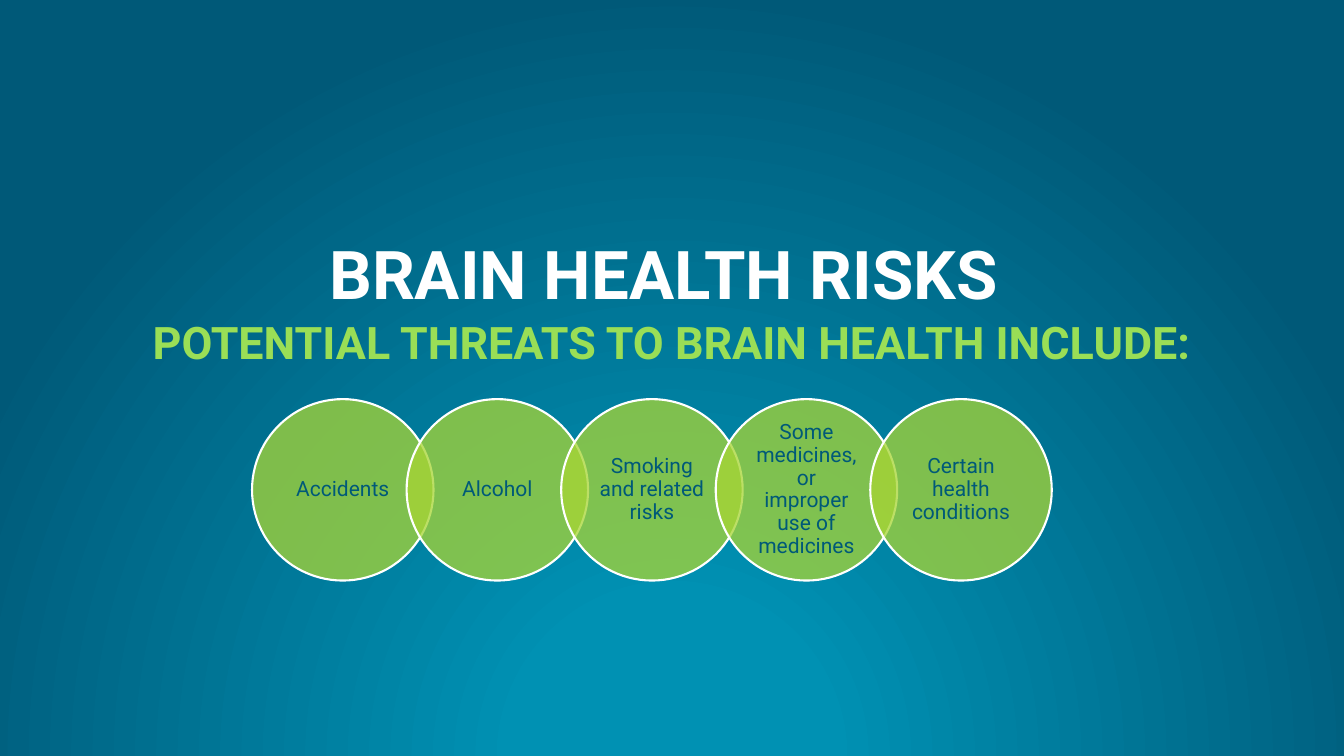
from pptx import Presentation
from pptx.dml.color import RGBColor
from pptx.enum.shapes import MSO_SHAPE
from pptx.enum.text import MSO_ANCHOR, PP_ALIGN
from pptx.oxml import parse_xml
from pptx.oxml.ns import nsdecls, qn
from pptx.util import Inches, Pt

OVAL = MSO_SHAPE.OVAL
CENTER = PP_ALIGN.CENTER
TOP, MIDDLE, BOTTOM = MSO_ANCHOR.TOP, MSO_ANCHOR.MIDDLE, MSO_ANCHOR.BOTTOM

FONT = "Roboto"
WHITE, NAVY, TEAL = "FFFFFF", "005978", "0091B3"
LIME, GREEN = "9ADE56", "A7D535"

RISKS = [
    "Accidents",
    "Alcohol",
    "Smoking and related risks",
    "Some medicines, or improper use of medicines",
    "Certain health conditions",
]
FIRST_LEFT, CIRCLE_TOP, DIAMETER, STEP = 2.5, 3.96, 1.8, 1.533


def rgb(color):
    return RGBColor.from_string(color)


def set_background(slide):
    stops = "".join(
        f'<a:gs pos="{pos * 1000}"><a:srgbClr val="{color}"/></a:gs>'
        for pos, color in [(0, TEAL), (20, TEAL), (100, NAVY)]
    )
    bg = parse_xml(
        f'<p:bg {nsdecls("p", "a")}><p:bgPr>'
        f'<a:gradFill rotWithShape="1"><a:gsLst>{stops}</a:gsLst>'
        '<a:path path="circle">'
        '<a:fillToRect l="50000" t="130000" r="50000" b="-30000"/></a:path>'
        "</a:gradFill><a:effectLst/></p:bgPr></p:bg>"
    )
    slide.element.cSld.insert(0, bg)


def write(tf, text, size, color, anchor, spacing, bold=False):
    tf.word_wrap = True
    tf.vertical_anchor = anchor
    p = tf.paragraphs[0]
    p.text = text
    p.alignment = CENTER
    p.line_spacing = spacing
    p.font.name = FONT
    p.font.size = Pt(size)
    p.font.bold = bold
    p.font.color.rgb = rgb(color)


def add_heading(slide, top, height, text, size, color, anchor, spacing):
    box = slide.shapes.add_textbox(
        Inches(0), Inches(top), Inches(13.33), Inches(height)
    )
    write(box.text_frame, text, size, color, anchor, spacing, bold=True)


def add_circle(slide, left, text):
    sp = slide.shapes.add_shape(
        OVAL, Inches(left), Inches(CIRCLE_TOP), Inches(DIAMETER), Inches(DIAMETER)
    )
    sp.shadow.inherit = False
    sp.fill.solid()
    sp.fill.fore_color.rgb = rgb(GREEN)
    fill_color = sp.element.spPr.find(qn("a:solidFill"))[0]
    fill_color.append(parse_xml(f'<a:alpha {nsdecls("a")} val="76000"/>'))
    sp.line.color.rgb = rgb(WHITE)
    sp.line.width = Pt(1.5)
    tf = sp.text_frame
    tf.margin_left = tf.margin_right = Inches(0.1)
    tf.margin_top = tf.margin_bottom = Inches(0.02)
    write(tf, text, 15, NAVY, MIDDLE, 0.9)


def main():
    prs = Presentation()
    prs.slide_width = Inches(13.33)
    prs.slide_height = Inches(7.5)
    slide = prs.slides.add_slide(prs.slide_layouts[6])
    set_background(slide)
    add_heading(slide, 2.38, 0.78, "BRAIN HEALTH RISKS ", 48, WHITE, BOTTOM, 0.9)
    add_heading(
        slide, 3.22, 0.85, "POTENTIAL THREATS TO BRAIN HEALTH INCLUDE:",
        32, LIME, TOP, Pt(27.8),
    )
    for i, risk in enumerate(RISKS):
        add_circle(slide, FIRST_LEFT + i * STEP, risk)
    prs.save("out.pptx")


if __name__ == "__main__":
    main()
